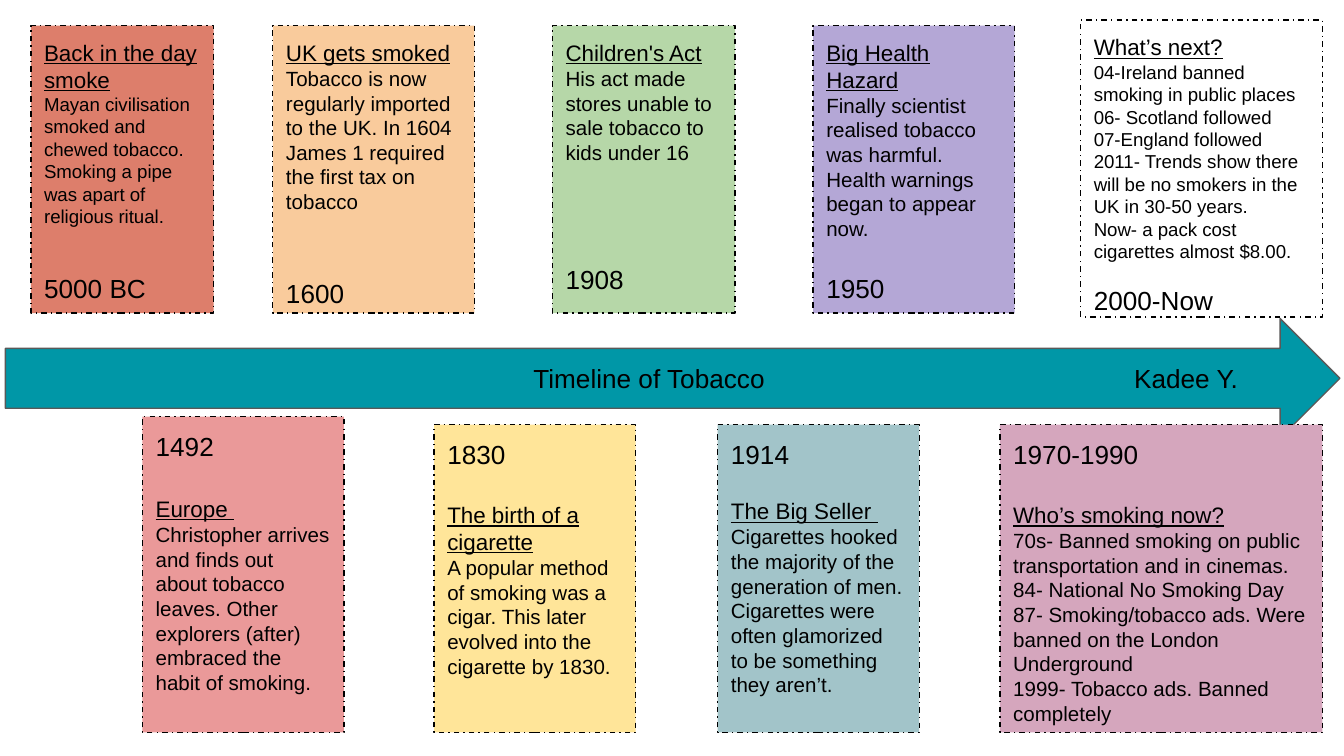
from pptx import Presentation
from pptx.dml.color import RGBColor
from pptx.enum.dml import MSO_LINE
from pptx.enum.shapes import MSO_SHAPE
from pptx.enum.text import MSO_ANCHOR, PP_ALIGN
from pptx.oxml.ns import qn
from pptx.util import Inches, Pt
from lxml import etree

RECTANGLE, ARROW = MSO_SHAPE.RECTANGLE, MSO_SHAPE.RIGHT_ARROW
DASH_DOT = MSO_LINE.DASH_DOT
TOP, MIDDLE = MSO_ANCHOR.TOP, MSO_ANCHOR.MIDDLE
LEFT = PP_ALIGN.LEFT

SLIDE_WIDTH = 10
SLIDE_HEIGHT = SLIDE_WIDTH * 9 / 16
FONT, INK = "Arial", "000000"
DATE_SIZE, HEADING_SIZE = 14, 12

BANNER = [("Timeline of Tobacco", 3.83), ("Kadee Y.", 8.3)]  # text, tab stop

# left, top, width, height, fill, date, heading, body size, body, gap to the date in points
UPPER = [
    (0.23, 0.19, 1.36, 2.14, "DD7E6B", "5000 BC", "Back in the day smoke", 10,
     ["Mayan civilisation smoked and chewed tobacco. Smoking a pipe was apart of "
      "religious ritual."], 24),
    (2.03, 0.19, 1.5, 2.14, "F9CB9C", "1600", "UK gets smoked", 11,
     ["Tobacco is now regularly imported to the UK. In 1604 James 1 required the "
      "first tax on tobacco"], 34),
    (4.11, 0.19, 1.36, 2.14, "B6D7A8", "1908", "Children's Act", 11,
     ["His act made stores unable to sale tobacco to kids under 16"], 53),
    (6.05, 0.19, 1.5, 2.14, "B4A7D6", "1950", "Big Health Hazard", 11,
     ["Finally scientist realised tobacco was harmful. Health warnings began to "
      "appear now."], 17),
    (8.04, 0.15, 1.8, 2.21, "FFFFFF", "2000-Now", "What’s next?", 10,
     ["04-Ireland banned smoking in public places",
      "06- Scotland followed",
      "07-England followed",
      "2011- Trends show there will be no smokers in the UK in 30-50 years.",
      "Now- a pack cost cigarettes almost $8.00."], 12),
]
LOWER = [
    (1.06, 3.1, 1.5, 2.35, "EA9999", "1492", "Europe ", 11,
     ["Christopher arrives and finds out about tobacco leaves. Other explorers "
      "(after) embraced the habit of smoking."], 18),
    (3.23, 3.16, 1.5, 2.29, "FFE599", "1830", "The birth of a cigarette", 11,
     ["A popular method of smoking was a cigar. This later evolved into the "
      "cigarette by 1830."], 17),
    (5.34, 3.16, 1.5, 2.29, "A2C4C9", "1914", "The Big Seller ", 11,
     ["Cigarettes hooked the majority of the generation of men. Cigarettes were "
      "often glamorized to be something they aren’t."], 15),
    (7.44, 3.16, 2.4, 2.29, "D5A6BD", "1970-1990", "Who’s smoking now?", 11,
     ["70s- Banned smoking on public transportation and in cinemas.",
      "84- National No Smoking Day",
      "87- Smoking/tobacco ads. Were banned on the London Underground",
      "1999- Tobacco ads. Banned completely"], 17),
]


def color(hex_value):
    return RGBColor.from_string(hex_value)


def add_block(slide, kind, box, fill, line, anchor):
    shape = slide.shapes.add_shape(kind, *map(Inches, box))
    shape.shadow.inherit = False
    shape.fill.solid()
    shape.fill.fore_color.rgb = color(fill)
    shape.line.color.rgb = color(line)
    shape.line.width = Pt(0.75)
    frame = shape.text_frame
    frame.word_wrap = True
    frame.vertical_anchor = anchor
    frame.margin_left = frame.margin_right = Inches(0.1)
    frame.margin_top = frame.margin_bottom = Inches(0.1)
    return shape


def write(paragraph, text, size, underline=False, gap=0):
    paragraph.alignment = LEFT
    paragraph.space_before = Pt(gap)
    run = paragraph.add_run()
    run.text = text
    run.font.name = FONT
    run.font.size = Pt(size)
    run.font.underline = underline
    run.font.color.rgb = color(INK)


def add_banner(slide):
    arrow = add_block(slide, ARROW, (0.04, 2.37, 9.93, 0.89), "0097A7", "595959", MIDDLE)
    paragraph = arrow.text_frame.paragraphs[0]
    write(paragraph, "".join("\t" + text for text, _ in BANNER), DATE_SIZE)
    properties = paragraph._p.get_or_add_pPr()
    stops = etree.SubElement(properties, qn("a:tabLst"))
    for _, position in BANNER:
        etree.SubElement(stops, qn("a:tab"), pos=str(Inches(position)), algn="l")


def add_card(slide, card, date_first):
    *box, fill, date, heading, body_size, body, gap = card
    shape = add_block(slide, RECTANGLE, box, fill, INK, TOP)
    shape.line.dash_style = DASH_DOT

    story = [(heading, HEADING_SIZE, True)] + [(text, body_size, False) for text in body]
    dated = [(date, DATE_SIZE, False)]
    first, second = (dated, story) if date_first else (story, dated)
    frame = shape.text_frame
    for index, (text, size, underline) in enumerate(first + second):
        paragraph = frame.add_paragraph() if index else frame.paragraphs[0]
        write(paragraph, text, size, underline, gap if index == len(first) else 0)


def main():
    deck = Presentation()
    deck.slide_width, deck.slide_height = Inches(SLIDE_WIDTH), Inches(SLIDE_HEIGHT)
    slide = deck.slides.add_slide(deck.slide_layouts[6])
    add_banner(slide)
    for card in UPPER:
        add_card(slide, card, date_first=False)
    for card in LOWER:
        add_card(slide, card, date_first=True)
    deck.save("out.pptx")


if __name__ == "__main__":
    main()
